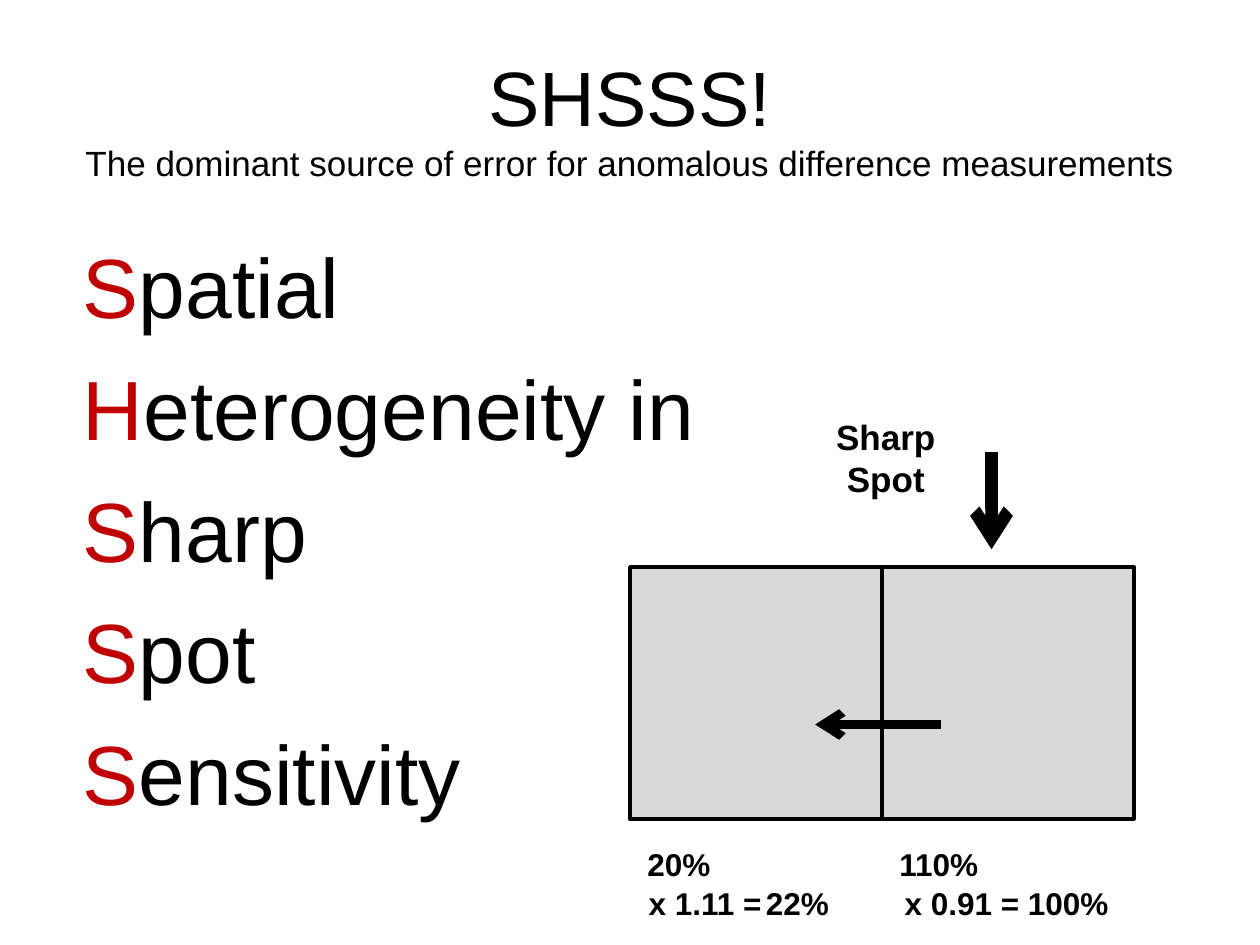
from dataclasses import dataclass
from typing import Optional

from lxml.etree import SubElement
from pptx import Presentation
from pptx.dml.color import RGBColor
from pptx.enum.shapes import MSO_CONNECTOR as Connector, MSO_SHAPE as Shape
from pptx.enum.text import MSO_ANCHOR as Anchor, PP_ALIGN as Align
from pptx.oxml.ns import qn
from pptx.util import Pt

BLACK = "000000"
RED = "C00000"
GREY = "D9D9D9"


@dataclass
class Run:
    text: str
    size: float
    color: str = BLACK
    bold: bool = False


@dataclass
class Label:
    text: str
    left: float
    top: float
    width: float


@dataclass
class Arrow:
    start: tuple[float, float]
    end: tuple[float, float]
    weight: float


def paint(color_format, color: str) -> None:
    color_format.rgb = RGBColor.from_string(color)


def add_text(slide, paragraphs: list[list[Run]], left: float, top: float,
             width: float, height: float, *, align=Align.LEFT,
             anchor=Anchor.TOP, wrap: bool = True, space_before: float = 0,
             top_inset: Optional[float] = None) -> None:
    """Add a text box; a run that starts with a newline begins after a line break."""
    box = slide.shapes.add_textbox(Pt(left), Pt(top), Pt(width), Pt(height))
    frame = box.text_frame
    frame.word_wrap = wrap
    frame.vertical_anchor = anchor
    if top_inset is not None:
        frame.margin_top = Pt(top_inset)
    for index, runs in enumerate(paragraphs):
        paragraph = frame.add_paragraph() if index else frame.paragraphs[0]
        paragraph.alignment = align
        if index:
            paragraph.space_before = Pt(space_before)
        for item in runs:
            if item.text.startswith("\n"):
                paragraph.add_line_break()
            run = paragraph.add_run()
            run.text = item.text.lstrip("\n")
            run.font.name = "Arial"
            run.font.size = Pt(item.size)
            run.font.bold = item.bold
            paint(run.font.color, item.color)


def add_pixel(slide, left: float, top: float, side: float) -> None:
    pixel = slide.shapes.add_shape(Shape.RECTANGLE, Pt(left), Pt(top), Pt(side), Pt(side))
    pixel.shadow.inherit = False
    pixel.fill.solid()
    paint(pixel.fill.fore_color, GREY)
    paint(pixel.line.color, BLACK)
    pixel.line.width = Pt(2)


def add_arrow(slide, arrow: Arrow) -> None:
    ends = [Pt(value) for value in (*arrow.start, *arrow.end)]
    connector = slide.shapes.add_connector(Connector.STRAIGHT, *ends)
    paint(connector.line.color, BLACK)
    connector.line.width = Pt(arrow.weight)
    properties = connector.element.spPr
    SubElement(properties.find(qn("a:ln")), qn("a:tailEnd"), type="arrow")
    SubElement(properties, qn("a:effectLst"))


def main() -> None:
    presentation = Presentation()
    presentation.slide_width, presentation.slide_height = Pt(720), Pt(540)
    slide = presentation.slides.add_slide(presentation.slide_layouts[6])

    subtitle = "The dominant source of error for anomalous difference measurements"
    add_text(slide, [[Run("SHSSS!", 44), Run("\n" + subtitle, 20)]],
             36, 21.6, 648, 90, align=Align.CENTER, anchor=Anchor.MIDDLE)

    words = ["Spatial", "Heterogeneity in", "Sharp", "Spot", "Sensitivity"]
    acronym = [[Run(word[0], 48, RED), Run(word[1:], 48)] for word in words]
    add_text(slide, acronym, 40.3, 126, 375, 356.4, space_before=12, top_inset=8)

    pixel_side = 144
    for column in range(2):
        add_pixel(slide, 360 + column * pixel_side, 324, pixel_side)

    add_arrow(slide, Arrow((537.8, 414), (465.8, 414), 5))
    add_arrow(slide, Arrow((566.6, 258.5), (566.6, 313.9), 7))

    add_text(slide, [[Run(word, 20, bold=True)] for word in ("Sharp", "Spot")],
             470.2, 234, 72, 55.4, align=Align.CENTER, wrap=False)

    first_row, second_row = 479.5, 501.8
    labels = [
        Label("20%", 362.9, first_row, 141),
        Label("110%", 506.9, first_row, 149),
        Label("x 1.11 =", 363.6, second_row, 82),
        Label("22%", 430.6, second_row, 73.4),
        Label("x 0.91 =", 509.8, second_row, 90),
        Label("100%", 580.3, second_row, 67.7),
    ]
    for label in labels:
        add_text(slide, [[Run(label.text, 18, bold=True)]],
                 label.left, label.top, label.width, 29)

    presentation.save("out.pptx")


if __name__ == "__main__":
    main()
